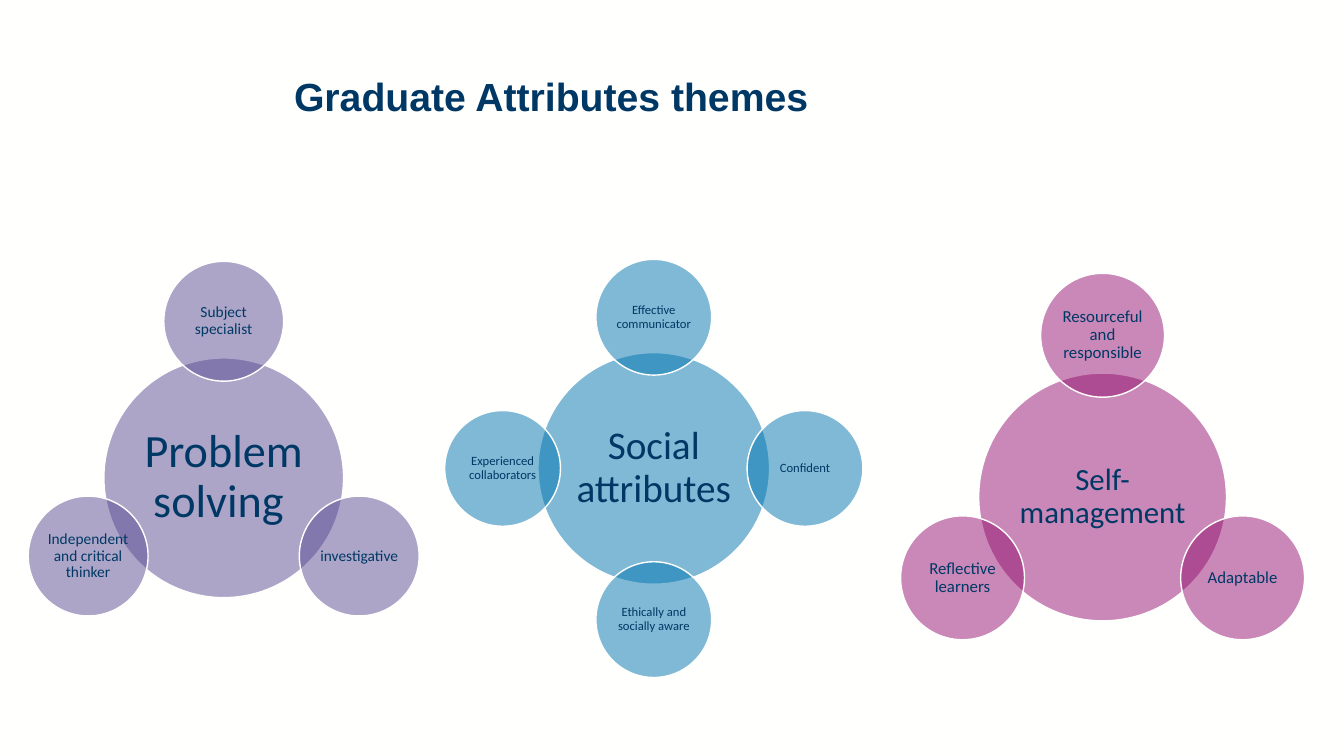
from math import cos, radians, sin

from pptx import Presentation
from pptx.dml.color import RGBColor
from pptx.enum.shapes import MSO_SHAPE as Shape
from pptx.enum.text import MSO_ANCHOR as Anchor, PP_ALIGN as Align
from pptx.oxml.ns import qn
from pptx.util import Pt
from lxml.etree import SubElement

NAVY = RGBColor(0x00, 0x38, 0x65)
OFF_WHITE = RGBColor(0xFF, 0xFF, 0xFE)
PURPLE = RGBColor(0x5B, 0x4D, 0x93)
BLUE = RGBColor(0x00, 0x75, 0xB0)
MAGENTA = RGBColor(0x95, 0x12, 0x71)

# Each theme: hub circle and the attributes spaced evenly around it, clockwise from the top
THEMES = [
    dict(theme="Problem solving ", color=PURPLE, center=(159.8, 341.3), diameter=171.2,
         orbit=111.8, theme_size=33, attribute_size=11,
         attributes=["Subject specialist", "investigative",
                     "Independent and critical thinker"]),
    dict(theme="Social attributes", color=BLUE, center=(467, 334.6), diameter=165.4,
         orbit=108, theme_size=28, attribute_size=9,
         attributes=["Effective communicator", "Confident",
                     "Ethically and socially aware", "Experienced collaborators"]),
    dict(theme="Self-management", color=MAGENTA, center=(787.6, 355), diameter=177,
         orbit=115.5, theme_size=22, attribute_size=12,
         attributes=["Resourceful and responsible", "Adaptable", "Reflective learners"]),
]


def write(frame, text, align, **font_format):
    """Put one navy paragraph into a text frame."""
    frame.word_wrap = True
    paragraph = frame.paragraphs[0]
    paragraph.alignment = align
    paragraph.line_spacing = 0.9
    run = paragraph.add_run()
    run.text = text
    run.font.color.rgb = NAVY
    for name, value in font_format.items():
        setattr(run.font, name, value)


def add_title(slide, text):
    title = slide.shapes.add_textbox(Pt(203), Pt(51.8), Pt(725), Pt(70))
    write(title.text_frame, text, Align.LEFT, name="Arial", size=Pt(28), bold=True)


def add_circle(group, text, x, y, diameter, color, size):
    """Add a half-transparent circle centred on x, y."""
    circle = group.shapes.add_shape(Shape.OVAL, Pt(x - diameter / 2), Pt(y - diameter / 2),
                                    Pt(diameter), Pt(diameter))
    circle.shadow.inherit = False
    circle.fill.solid()
    circle.fill.fore_color.rgb = color
    SubElement(circle.fill._xPr.find(".//" + qn("a:srgbClr")), qn("a:alpha"), val="50000")
    circle.line.color.rgb = OFF_WHITE
    circle.line.width = Pt(1)

    frame = circle.text_frame
    frame.vertical_anchor = Anchor.MIDDLE
    for side in ("left", "top", "right", "bottom"):
        setattr(frame, f"margin_{side}", Pt(size / 10))
    write(frame, text, Align.CENTER, name="Calibri", size=Pt(size))


def add_theme(slide, theme, color, center, diameter, orbit, theme_size,
              attribute_size, attributes):
    """Add a hub with its ring of half-size attribute circles."""
    group = slide.shapes.add_group_shape()
    x, y = center
    add_circle(group, theme, x, y, diameter, color, theme_size)
    for index, attribute in enumerate(attributes):
        angle = radians(360 * index / len(attributes))
        add_circle(group, attribute, x + orbit * sin(angle), y - orbit * cos(angle),
                   diameter / 2, color, attribute_size)


def main():
    deck = Presentation()
    deck.slide_width, deck.slide_height = Pt(960), Pt(540)
    slide = deck.slides.add_slide(deck.slide_layouts[6])
    slide.background.fill.solid()
    slide.background.fill.fore_color.rgb = OFF_WHITE

    add_title(slide, "Graduate Attributes themes")
    for theme in THEMES:
        add_theme(slide, **theme)

    deck.save("out.pptx")


if __name__ == "__main__":
    main()
